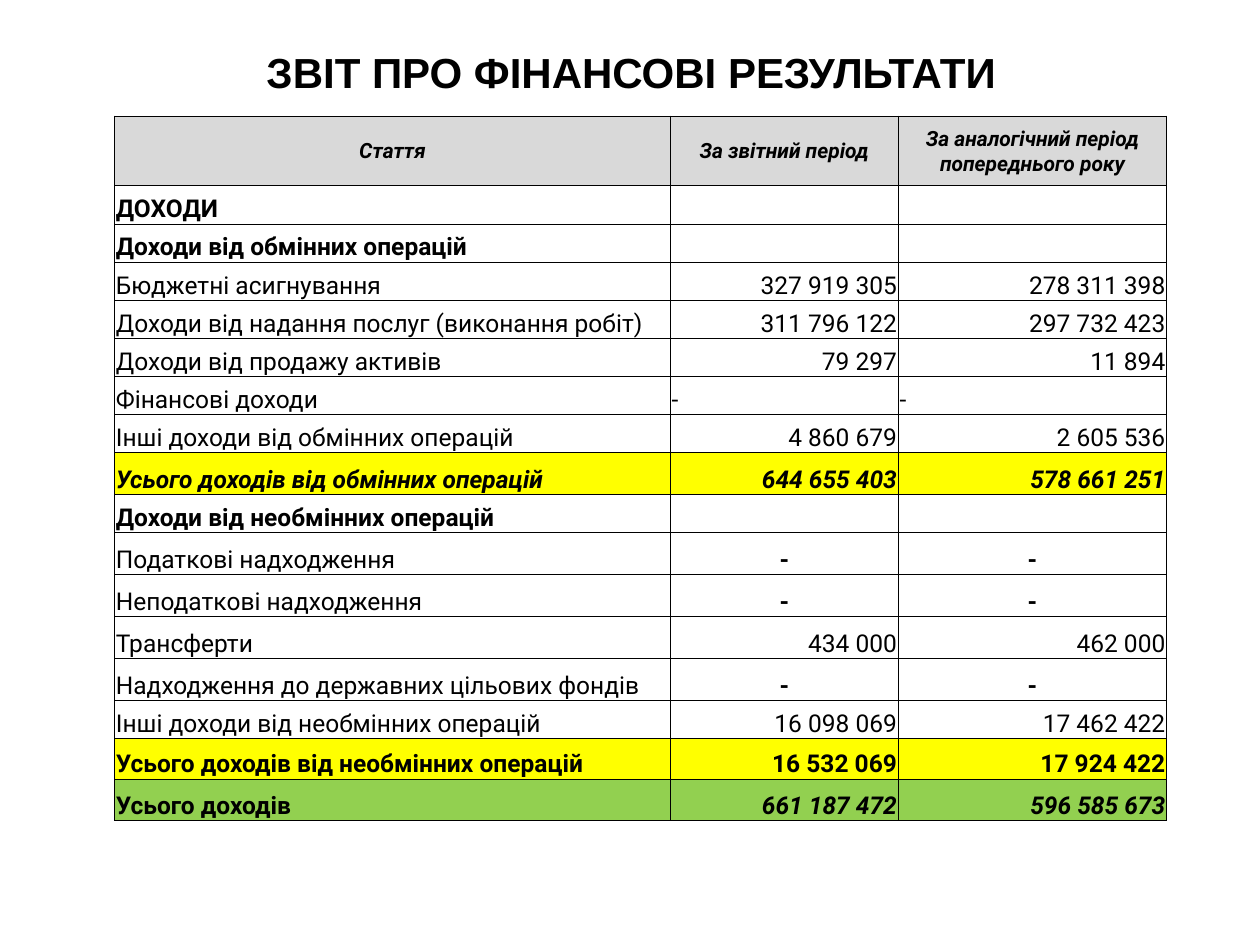
from lxml import etree
from pptx import Presentation
from pptx.dml.color import RGBColor
from pptx.enum.text import MSO_ANCHOR, PP_ALIGN
from pptx.oxml.ns import qn
from pptx.util import Inches, Pt

LEFT, CENTER, RIGHT = PP_ALIGN.LEFT, PP_ALIGN.CENTER, PP_ALIGN.RIGHT
MIDDLE, BOTTOM = MSO_ANCHOR.MIDDLE, MSO_ANCHOR.BOTTOM

BLACK, GRAY, YELLOW, GREEN = "000000", "D9D9D9", "FFFF00", "92D050"
TABLE_HEIGHT = 5.6
COLUMN_WIDTHS = (4.41, 1.81, 2.13)

BOLD = {"bold": True}
BOLD_ITALIC = {"bold": True, "italic": True}
HEADER = {"size": 12, "align": CENTER, "anchor": MIDDLE, **BOLD_ITALIC}
NUMBER = {"align": RIGHT}
DASH = {"align": CENTER, **BOLD}

STYLES = {
    "header": (HEADER, HEADER, GRAY),
    "section": (BOLD, {}, None),
    "item": ({}, NUMBER, None),
    "nil": ({}, {}, None),
    "dash": ({}, DASH, None),
    "exchange total": (BOLD_ITALIC, {**NUMBER, **BOLD_ITALIC}, YELLOW),
    "other total": (BOLD, {**NUMBER, **BOLD}, YELLOW),
    "grand total": (BOLD, {**NUMBER, **BOLD_ITALIC}, GREEN),
}

ROWS = [
    ("header", 0.55, "Стаття", "За звітний період", "За аналогічний період попереднього року"),
    ("section", 0.3, "ДОХОДИ", "", ""),
    ("section", 0.3, "Доходи від обмінних операцій", "", ""),
    ("item", 0.3, "Бюджетні асигнування", "327 919 305", "278 311 398"),
    ("item", 0.3, "Доходи від надання послуг (виконання робіт)", "311 796 122", "297 732 423"),
    ("item", 0.3, "Доходи від продажу активів", "79 297", "11 894"),
    ("nil", 0.3, "Фінансові доходи", "-", "-"),
    ("item", 0.3, "Інші доходи від обмінних операцій", "4 860 679", "2 605 536"),
    ("exchange total", 0.33, "Усього доходів від обмінних операцій", "644 655 403", "578 661 251"),
    ("section", 0.3, "Доходи від необмінних операцій", "", ""),
    ("dash", 0.33, "Податкові надходження", "-", "-"),
    ("dash", 0.33, "Неподаткові надходження", "-", "-"),
    ("item", 0.33, "Трансферти", "434 000", "462 000"),
    ("dash", 0.33, "Надходження до державних цільових фондів", "-", "-"),
    ("item", 0.3, "Інші доходи від необмінних операцій", "16 098 069", "17 462 422"),
    ("other total", 0.32, "Усього доходів від необмінних операцій", "16 532 069", "17 924 422"),
    ("grand total", 0.33, "Усього доходів", "661 187 472", "596 585 673"),
]


def rgb(color):
    return RGBColor.from_string(color)


def write_text(tf, text, size=14, font="Roboto", bold=False, italic=False, align=LEFT, color=BLACK):
    p = tf.paragraphs[0]
    p.alignment = align
    if not text:
        p._p.get_or_add_endParaRPr().set("sz", str(size * 100))
        return
    r = p.add_run()
    r.text = text
    r.font.size = Pt(size)
    r.font.name = font
    r.font.bold = bold
    r.font.italic = italic
    r.font.color.rgb = rgb(color)


def set_borders(cell, color=BLACK, width=0.5):
    tc_pr = cell._tc.get_or_add_tcPr()
    for index, side in enumerate(("lnL", "lnR", "lnT", "lnB")):
        ln = etree.Element(qn(f"a:{side}"), w=str(Pt(width)))
        fill = etree.SubElement(ln, qn("a:solidFill"))
        etree.SubElement(fill, qn("a:srgbClr"), val=color)
        tc_pr.insert(index, ln)


def fill_cell(cell, text, fill=None, anchor=BOTTOM, **style):
    cell.margin_left = cell.margin_right = cell.margin_top = Inches(0.01)
    cell.margin_bottom = 0
    cell.vertical_anchor = anchor
    if fill:
        cell.fill.solid()
        cell.fill.fore_color.rgb = rgb(fill)
    else:
        cell.fill.background()
    set_borders(cell)
    write_text(cell.text_frame, text, **style)


def add_title(s, text):
    sp = s.shapes.title
    sp.left, sp.top, sp.width, sp.height = Inches(0.51), Inches(0.29), Inches(9), Inches(0.55)
    tf = sp.text_frame
    tf.word_wrap = True
    tf.vertical_anchor = MIDDLE
    write_text(tf, text, size=24, font="Arial", bold=True, align=CENTER)


def add_income_table(s):
    frame = s.shapes.add_table(len(ROWS), len(COLUMN_WIDTHS), Inches(0.91), Inches(0.92),
                               Inches(sum(COLUMN_WIDTHS)), Inches(TABLE_HEIGHT))
    table = frame.table
    table.first_row = table.horz_banding = False
    for column, width in zip(table.columns, COLUMN_WIDTHS):
        column.width = Inches(width)
    scale = TABLE_HEIGHT / sum(height for _, height, *_ in ROWS)
    for row, (kind, height, *texts) in zip(table.rows, ROWS):
        row.height = Inches(height * scale)
        label, value, fill = STYLES[kind]
        for cell, text, style in zip(row.cells, texts, (label, value, value)):
            fill_cell(cell, text, fill, **style)


def main():
    prs = Presentation()
    prs.slide_width, prs.slide_height = Inches(10), Inches(7.5)
    s = prs.slides.add_slide(prs.slide_layouts[5])
    add_title(s, "ЗВІТ ПРО ФІНАНСОВІ РЕЗУЛЬТАТИ")
    add_income_table(s)
    prs.save("out.pptx")


if __name__ == "__main__":
    main()
